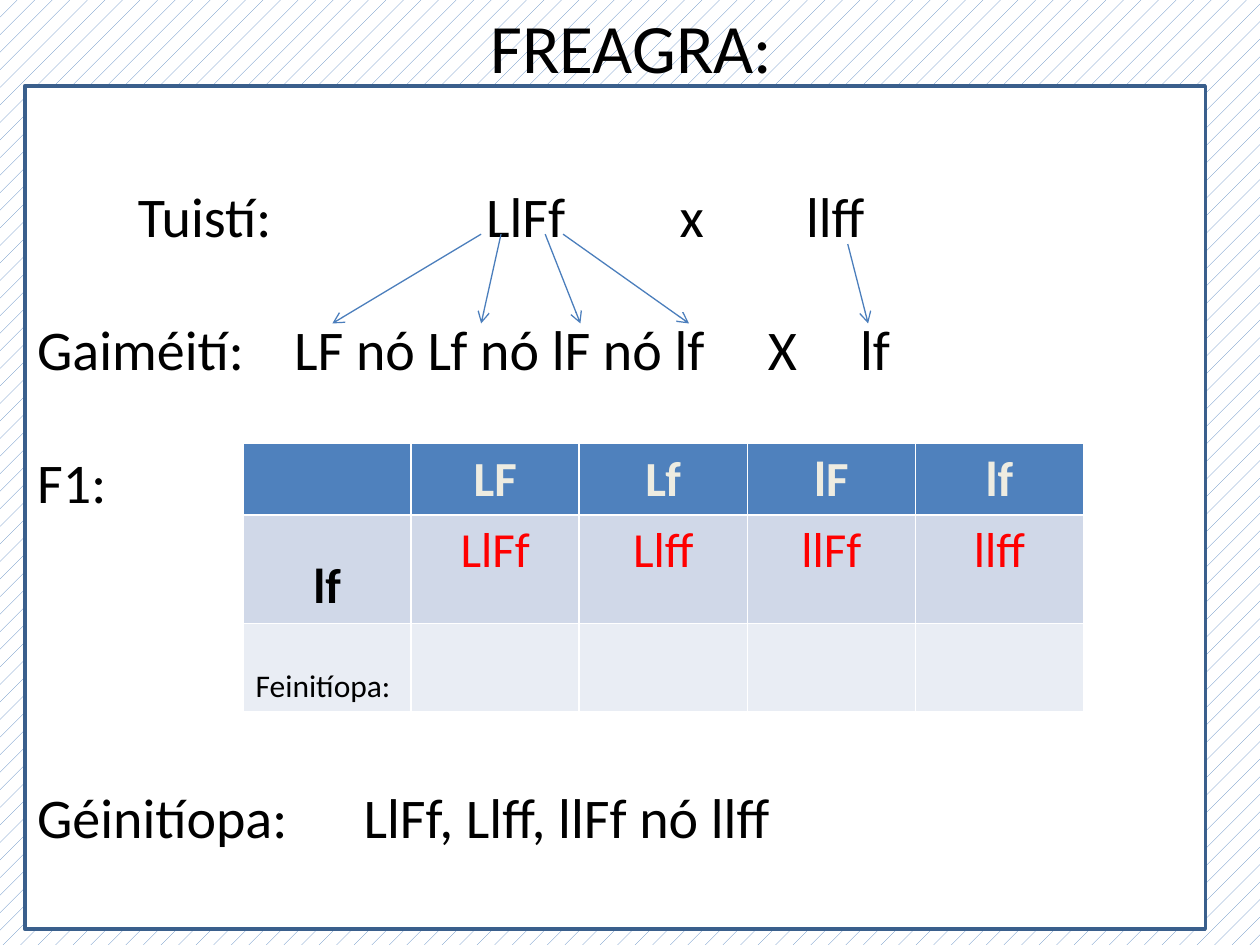
import pptx
import pptx.dml.color
import pptx.enum.dml
import pptx.enum.shapes
import pptx.enum.text
import pptx.oxml
import pptx.oxml.ns
import pptx.util

Cm = pptx.util.Cm
Pt = pptx.util.Pt
RGBColor = pptx.dml.color.RGBColor
ALIGN = pptx.enum.text.PP_ALIGN
ANCHOR = pptx.enum.text.MSO_ANCHOR

BLACK = RGBColor(0x00, 0x00, 0x00)
WHITE = RGBColor(0xFF, 0xFF, 0xFF)
RED = RGBColor(0xFF, 0x00, 0x00)
CREAM = RGBColor(0xEE, 0xEC, 0xE1)
BLUE = RGBColor(0x4F, 0x81, 0xBD)
FRAME_BLUE = RGBColor(0x3A, 0x5F, 0x8C)
ARROW_BLUE = RGBColor(0x4B, 0x7E, 0xBC)
BAND_DARK = RGBColor(0xD0, 0xD8, 0xE8)
BAND_LIGHT = RGBColor(0xE9, 0xED, 0xF4)


def write(p, text, size=32, color=BLACK, bold=False, align=ALIGN.LEFT, before=0, tabs=()):
    """Write text into a paragraph with its format and tab stops in cm."""
    p.alignment = align
    p.space_before = Pt(before)
    if tabs:
        tab_list = pptx.oxml.ns.qn("a:tabLst")
        stops = p._p.get_or_add_pPr().makeelement(tab_list, {})
        p._p.get_or_add_pPr().append(stops)
        for x in tabs:
            stop = stops.makeelement(pptx.oxml.ns.qn("a:tab"), {"pos": str(Cm(x)), "algn": "l"})
            stops.append(stop)
    r = p.add_run()
    r.text = text
    r.font.name = "Calibri"
    r.font.size = Pt(size)
    r.font.bold = bold
    r.font.color.rgb = color


def add_title(s, left, top, width, height):
    """Place the centred title."""
    tf = s.shapes.add_textbox(Cm(left), Cm(top), Cm(width), Cm(height)).text_frame
    tf.word_wrap = True
    tf.vertical_anchor = ANCHOR.MIDDLE
    write(tf.paragraphs[0], "FREAGRA:", size=39.6, align=ALIGN.CENTER)


def add_frame(s, left, top, width, height):
    """Place the white panel behind the answer."""
    sp = s.shapes.add_shape(
        pptx.enum.shapes.MSO_SHAPE.RECTANGLE, Cm(left), Cm(top), Cm(width), Cm(height))
    sp.shadow.inherit = False
    sp.fill.solid()
    sp.fill.fore_color.rgb = WHITE
    sp.line.color.rgb = FRAME_BLUE
    sp.line.width = Pt(2)


def add_answer(s, left, top, width, height):
    """Place the steps of the cross, lined up by tab stops."""
    tf = s.shapes.add_textbox(Cm(left), Cm(top), Cm(width), Cm(height)).text_frame
    tf.word_wrap = True
    steps = [
        ("\tTuistí:\tLlFf\tx\tllff", 0, (2.03, 9.05, 12.95, 15.5)),
        ("Gaiméití:\tLF nó Lf nó lF nó lf\tX\tlf", 37.7, (5.18, 14.73, 16.59)),
        ("F1:", 37.7, ()),
        ("Géinitíopa:\tLlFf, Llff, llFf nó llff", 153, (6.58,)),
    ]
    for i, (text, before, tabs) in enumerate(steps):
        p = tf.add_paragraph() if i else tf.paragraphs[0]
        write(p, text, before=before, tabs=tabs)


def add_arrows(s, left, top, height):
    """Place the arrows that lead from each parent to its gametes."""
    arrows = [(3, 0, 0), (3.4, 0, 3), (4.29, 0, 5), (4.65, 0, 7.19), (10.39, 0.2, 10.8)]
    for start, drop, end in arrows:
        c = s.shapes.add_connector(
            pptx.enum.shapes.MSO_CONNECTOR.STRAIGHT,
            Cm(left + start), Cm(top + drop), Cm(left + end), Cm(top + height))
        c.line.color.rgb = ARROW_BLUE
        c.line.width = Pt(0.75)
        ln = c.line._get_or_add_ln()
        ln.append(ln.makeelement(pptx.oxml.ns.qn("a:tailEnd"), {"type": "arrow"}))
        sp_pr = c._element.spPr
        sp_pr.append(sp_pr.makeelement(pptx.oxml.ns.qn("a:effectLst"), {}))


def add_square(s, left, top, width, height):
    """Place the Punnett square."""
    rows = [
        ["", "LF", "Lf", "lF", "lf"],
        ["lf", "LlFf", "Llff", "llFf", "llff"],
        ["Feinitíopa:", "", "", "", ""],
    ]
    fills = [BLUE, BAND_DARK, BAND_LIGHT]
    shares = [0.265, 0.405, 0.33]
    head = dict(size=28, color=CREAM, bold=True, align=ALIGN.CENTER)
    child = dict(size=28, color=RED, align=ALIGN.CENTER)
    gamete = dict(size=28, bold=True, align=ALIGN.CENTER)
    formats = [(head, head), (gamete, child), (dict(size=18), {})]
    table = s.shapes.add_table(3, 5, Cm(left), Cm(top), Cm(width), Cm(height)).table
    for i, row in enumerate(rows):
        table.rows[i].height = Cm(height * shares[i])
        for j, text in enumerate(row):
            cell = table.cell(i, j)
            cell.fill.solid()
            cell.fill.fore_color.rgb = fills[i]
            cell.vertical_anchor = ANCHOR.TOP if j else ANCHOR.BOTTOM
            if text:
                write(cell.text_frame.paragraphs[0], text, **formats[i][min(j, 1)])


def main():
    """Build the slide and save it."""
    prs = pptx.Presentation()
    prs.slide_width, prs.slide_height = Cm(25.4), Cm(19.05)
    s = prs.slides.add_slide(prs.slide_layouts[6])
    fill = s.background.fill
    fill.patterned()
    fill.pattern = pptx.enum.dml.MSO_PATTERN.PERCENT_5
    fill.fore_color.rgb = BLUE
    fill.back_color.rgb = WHITE
    add_title(s, 1.3, 0.33, 22.86, 1.17)
    add_frame(s, 0.5, 1.73, 23.8, 17)
    add_answer(s, 0.5, 3.53, 21, 13.94)
    add_arrows(s, 6.7, 4.72, 1.8)
    add_square(s, 4.9, 8.94, 16.94, 5.4)
    prs.save("out.pptx")


if __name__ == "__main__":
    main()
